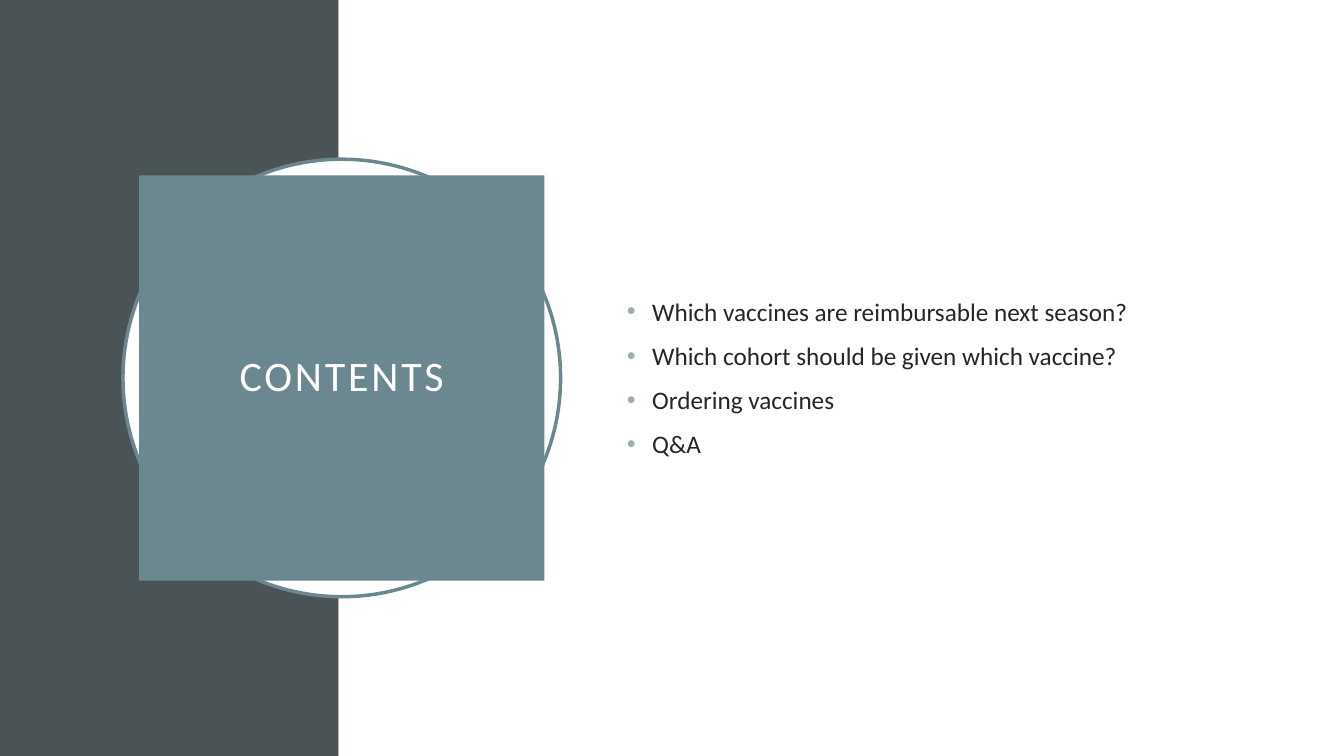
from lxml import etree
from pptx import Presentation
from pptx.dml.color import RGBColor
from pptx.enum.shapes import MSO_SHAPE
from pptx.enum.text import MSO_ANCHOR, PP_ALIGN
from pptx.oxml.ns import qn
from pptx.util import Inches, Pt

RECTANGLE, OVAL = MSO_SHAPE.RECTANGLE, MSO_SHAPE.OVAL
MIDDLE, CENTER = MSO_ANCHOR.MIDDLE, PP_ALIGN.CENTER
FONT = "Calibri"
SLATE, TEAL, WHITE, INK, BULLET = "4A5356", "6B8891", "FFFFFF", "262626", "9BAFB5"
SLIDE_WIDTH, SLIDE_HEIGHT = 13.33, 7.5
BAND_WIDTH = 3.36
TOPICS = [
    "Which vaccines are reimbursable next season?",
    "Which cohort should be given which vaccine?",
    "Ordering vaccines",
    "Q&A",
]


def color(hex_string):
    """Turn a hex string into a colour."""
    return RGBColor.from_string(hex_string)


def add_filled(slide, kind, left, top, width, height, fill, outline=None):
    """Add a flat shape with an optional outline."""
    shape = slide.shapes.add_shape(
        kind, Inches(left), Inches(top), Inches(width), Inches(height))
    shape.shadow.inherit = False
    shape.fill.solid()
    shape.fill.fore_color.rgb = color(fill)
    if outline:
        shape.line.color.rgb = color(outline)
        shape.line.width = Pt(2.5)
    else:
        shape.line.fill.background()
    return shape


def style_font(paragraph, size, hex_string):
    """Set the typeface, size and colour of a paragraph."""
    paragraph.font.name = FONT
    paragraph.font.size = Pt(size)
    paragraph.font.color.rgb = color(hex_string)


def add_backdrop(slide, width, height):
    """Split the slide into a dark band and a white panel."""
    add_filled(slide, RECTANGLE, 0, 0, BAND_WIDTH, height, SLATE)
    add_filled(slide, RECTANGLE, BAND_WIDTH, 0, width - BAND_WIDTH, height, WHITE)


def add_title_badge(slide, left, top, size, title):
    """Place the title square centred over an outlined ring."""
    inset = 0.16
    side = size - 2 * inset
    add_filled(slide, OVAL, left, top, size, size, WHITE, TEAL)
    badge = add_filled(slide, RECTANGLE, left + inset, top + inset, side, side, TEAL)
    frame = badge.text_frame
    frame.word_wrap = True
    frame.vertical_anchor = MIDDLE
    frame.margin_left = frame.margin_right = Inches(0.2)
    frame.margin_top = frame.margin_bottom = Inches(0.2)
    heading = frame.paragraphs[0]
    heading.alignment = CENTER
    heading.line_spacing = 0.9
    style_font(heading, 30, WHITE)
    run = heading.add_run()
    run.text = title
    run.font._element.set("spc", "200")


def add_bullet(paragraph):
    """Give a paragraph a hanging coloured bullet."""
    properties = paragraph._p.get_or_add_pPr()
    properties.set("marL", str(Inches(0.25)))
    properties.set("indent", str(-Inches(0.25)))
    bullet_color = etree.SubElement(properties, qn("a:buClr"))
    etree.SubElement(bullet_color, qn("a:srgbClr"), val=BULLET)
    etree.SubElement(properties, qn("a:buFont"), typeface="Arial")
    etree.SubElement(properties, qn("a:buChar"), char="•")


def add_topics(slide, left, top, width, height, topics):
    """List the topics, centred vertically in the box."""
    box = slide.shapes.add_textbox(
        Inches(left), Inches(top), Inches(width), Inches(height))
    frame = box.text_frame
    frame.word_wrap = True
    frame.vertical_anchor = MIDDLE
    for index, topic in enumerate(topics):
        entry = frame.add_paragraph() if index else frame.paragraphs[0]
        entry.text = topic
        add_bullet(entry)
        entry.space_before = Pt(10)
        style_font(entry, 18, INK)


def build_contents_slide(presentation):
    """Build the contents slide."""
    slide = presentation.slides.add_slide(presentation.slide_layouts[6])
    add_backdrop(slide, SLIDE_WIDTH, SLIDE_HEIGHT)
    add_title_badge(slide, 1.22, 1.58, 4.34, "CONTENTS")
    add_topics(slide, 6.12, 1.53, 5.82, 4.43, TOPICS)


def main():
    """Create and save the presentation."""
    presentation = Presentation()
    presentation.slide_width = Inches(SLIDE_WIDTH)
    presentation.slide_height = Inches(SLIDE_HEIGHT)
    build_contents_slide(presentation)
    presentation.save("out.pptx")


if __name__ == "__main__":
    main()
